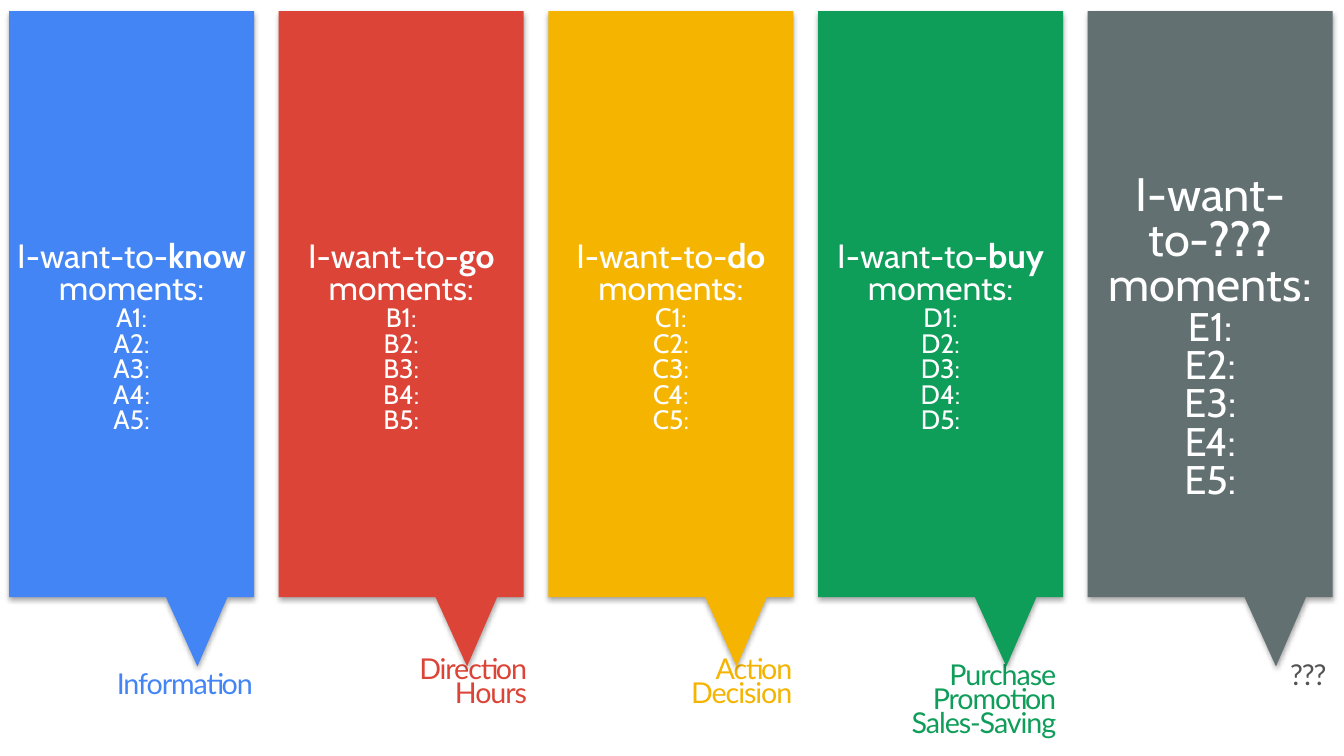
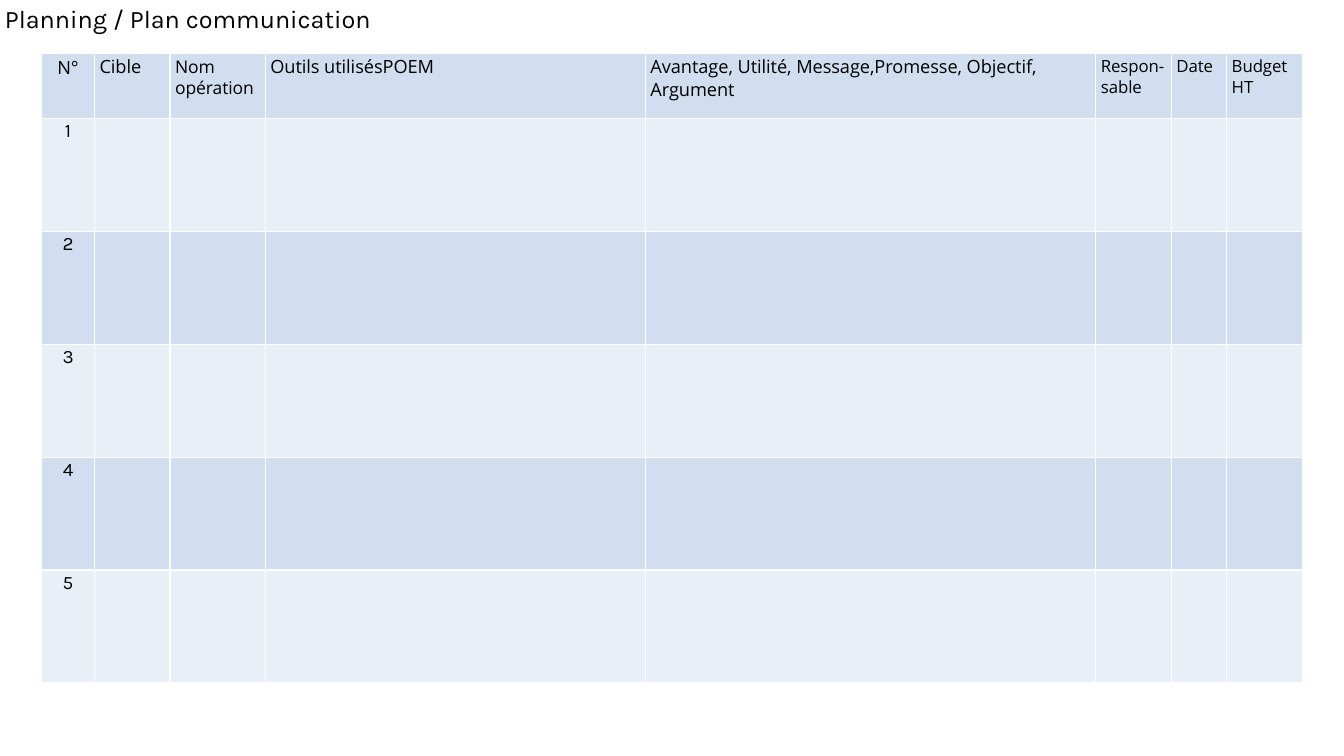
from dataclasses import dataclass

from lxml import etree
from pptx import Presentation
from pptx.dml.color import RGBColor
from pptx.enum.text import MSO_ANCHOR, MSO_AUTO_SIZE, PP_ALIGN
from pptx.oxml.ns import qn
from pptx.util import Pt

LEFT, CENTER, RIGHT = PP_ALIGN.LEFT, PP_ALIGN.CENTER, PP_ALIGN.RIGHT
MIDDLE, TOP = MSO_ANCHOR.MIDDLE, MSO_ANCHOR.TOP
GROW = MSO_AUTO_SIZE.SHAPE_TO_FIT_TEXT


@dataclass(frozen=True)
class Theme:
    blue: str = "4385F5"
    red: str = "DB4437"
    yellow: str = "F4B400"
    green: str = "0E9E59"
    slate: str = "627072"
    gray: str = "535353"
    white: str = "FFFFFF"
    black: str = "000000"
    band_dark: str = "D0DEEF"
    band_light: str = "E9EFF7"
    callout_font: str = "Cabin"
    label_font: str = "Lato"
    header_font: str = "Open Sans"
    title_font: str = "Karla"
    title_size: int = 36
    heading_size: int = 48
    item_size: int = 38
    big_heading_size: int = 67
    big_item_size: int = 57
    label_size: int = 41
    number_size: int = 27


THEME = Theme()

CALLOUT_LEFT, CALLOUT_TOP, CALLOUT_PITCH = 13, 16, 385.2
CALLOUT_OUTLINE = [(0, 0), (350, 0), (350, 837), (312, 837), (269, 936), (224, 837), (0, 837)]

MOMENTS = [
    ("A", "know", THEME.blue, THEME.blue, ["Information"], CENTER, 155, 955, 218),
    ("B", "go", THEME.red, THEME.red, ["Direction", "Hours"], RIGHT, 587, 934.5, 175),
    ("C", "do", THEME.yellow, THEME.yellow, ["Action", "Decision"], RIGHT, 976, 934.5, 165),
    ("D", "buy", THEME.green, THEME.green, ["Purchase", "Promotion", "Sales-Saving"],
     RIGHT, 1288, 943, 230),
    ("E", "???", THEME.slate, THEME.gray, ["???"], RIGHT, 1827, 943, 77),
]

PLAN_COLUMNS = [
    ("N°", 75.5, 26),
    ("Cible", 108, 26),
    ("Nom opération", 136, 25),
    ("Outils utilisésPOEM", 543, 26),
    ("Avantage, Utilité, Message,Promesse, Objectif, Argument", 643.5, 26),
    ("Respon-sable", 108, 24),
    ("Date", 79, 24),
    ("Budget HT", 108, 24),
]
PLAN_ROWS = 5


def write(frame, paragraphs, size, font, color, align=LEFT, spacing=1.0, tracking=0,
          margins=(9, 9), anchor=TOP, wrap=True):
    frame.word_wrap = wrap
    frame.vertical_anchor = anchor
    frame.margin_left = frame.margin_right = Pt(margins[0])
    frame.margin_top = frame.margin_bottom = Pt(margins[1])
    for index, runs in enumerate(paragraphs):
        paragraph = frame.add_paragraph() if index else frame.paragraphs[0]
        paragraph.alignment = align
        paragraph.line_spacing = spacing
        for text, changes in [(runs, {})] if isinstance(runs, str) else runs:
            run = paragraph.add_run()
            run.text = text
            run.font.size = Pt(changes.get("size", size))
            run.font.bold = changes.get("bold", False)
            run.font.name = font
            run.font.color.rgb = RGBColor.from_string(color)
            if tracking:
                run._r.get_or_add_rPr().set("spc", str(round(tracking * 100)))


class Deck:
    def __init__(self, theme, width, height):
        self.theme = theme
        self.presentation = Presentation()
        self.presentation.slide_width = Pt(width)
        self.presentation.slide_height = Pt(height)
        self.slide = None

    def add_slide(self):
        self.slide = self.presentation.slides.add_slide(self.presentation.slide_layouts[6])
        self.slide.background.fill.solid()
        self.slide.background.fill.fore_color.rgb = RGBColor.from_string(self.theme.white)

    def text(self, left, top, width, height, paragraphs, **text_format):
        frame = self.slide.shapes.add_textbox(Pt(left), Pt(top), Pt(width), Pt(height)).text_frame
        write(frame, paragraphs, wrap=False, **text_format)
        frame.auto_size = GROW

    def shadow(self, shape):
        shape.shadow.inherit = False
        effects = shape._element.spPr.find(qn("a:effectLst"))
        outer = etree.SubElement(effects, qn("a:outerShdw"), blurRad=str(Pt(8)),
                                 dist=str(Pt(4)), dir="5400000", rotWithShape="0")
        color = etree.SubElement(outer, qn("a:srgbClr"), val=self.theme.black)
        etree.SubElement(color, qn("a:alpha"), val="35000")

    def callout(self, left, top, color, paragraphs, size):
        points = [(Pt(left + x), Pt(top + y)) for x, y in CALLOUT_OUTLINE]
        builder = self.slide.shapes.build_freeform(*points[0], scale=1.0)
        builder.add_line_segments(points[1:], close=True)
        shape = builder.convert_to_shape()
        shape.fill.solid()
        shape.fill.fore_color.rgb = RGBColor.from_string(color)
        shape.line.fill.background()
        self.shadow(shape)
        write(shape.text_frame, paragraphs, size=size, font=self.theme.callout_font,
              color=self.theme.white, align=CENTER, spacing=0.8, anchor=MIDDLE)

    def cell_style(self, cell, color):
        properties = cell._tc.get_or_add_tcPr()
        for side in ("a:lnL", "a:lnR", "a:lnT", "a:lnB"):
            border = etree.SubElement(properties, qn(side), w=str(Pt(2)))
            fill = etree.SubElement(border, qn("a:solidFill"))
            etree.SubElement(fill, qn("a:srgbClr"), val=self.theme.white)
        cell.fill.solid()
        cell.fill.fore_color.rgb = RGBColor.from_string(color)

    def plan_table(self, left, top, header_height, row_height):
        theme = self.theme
        width = sum(column[1] for column in PLAN_COLUMNS)
        height = header_height + PLAN_ROWS * row_height
        table = self.slide.shapes.add_table(PLAN_ROWS + 1, len(PLAN_COLUMNS), Pt(left), Pt(top),
                                            Pt(width), Pt(height)).table
        table.first_row = table.horz_banding = False
        shared = dict(color=theme.black, tracking=-0.1, margins=(5, 0))
        for index, row in enumerate(table.rows):
            row.height = Pt(row_height if index else header_height)
            for cell in row.cells:
                self.cell_style(cell, theme.band_light if index % 2 else theme.band_dark)
            if index:
                write(row.cells[0].text_frame, [str(index)], size=theme.number_size,
                      font=theme.title_font, align=CENTER, spacing=0.95, **shared)
        for index, (heading, column_width, size) in enumerate(PLAN_COLUMNS):
            table.columns[index].width = Pt(column_width)
            write(table.cell(0, index).text_frame, [heading], size=size, font=theme.header_font,
                  align=LEFT if index else CENTER, spacing=0.9 if index else 0.95, **shared)


def moments_slide(deck):
    theme = deck.theme
    deck.add_slide()
    for index, moment in enumerate(MOMENTS):
        letter, verb, color, label_color, label, align, left, top, width = moment
        is_open = verb == "???"
        heading_size = theme.big_heading_size if is_open else theme.heading_size
        item_size = theme.big_item_size if is_open else theme.item_size
        items = [[(f"{letter}{number}:", {"size": item_size})] for number in range(1, 6)]
        heading = [("I-want-to-", {}), (verb, {"bold": True})]
        deck.text(left, top, width, 36 + 39 * len(label), label, size=theme.label_size,
                  font=theme.label_font, color=label_color, align=align, spacing=0.7,
                  tracking=-1.6)
        deck.callout(CALLOUT_LEFT + index * CALLOUT_PITCH, CALLOUT_TOP, color,
                     [heading, "moments:"] + items, heading_size)


def plan_slide(deck):
    theme = deck.theme
    deck.add_slide()
    deck.plan_table(59.5, 76.5, 93, 161.25)
    deck.text(0, -2, 546, 63, ["Planning / Plan communication"], size=theme.title_size,
              font=theme.title_font, color=theme.black, margins=(7, 7))


def main():
    deck = Deck(THEME, 1920, 1080)
    moments_slide(deck)
    plan_slide(deck)
    deck.presentation.save("out.pptx")


if __name__ == "__main__":
    main()
